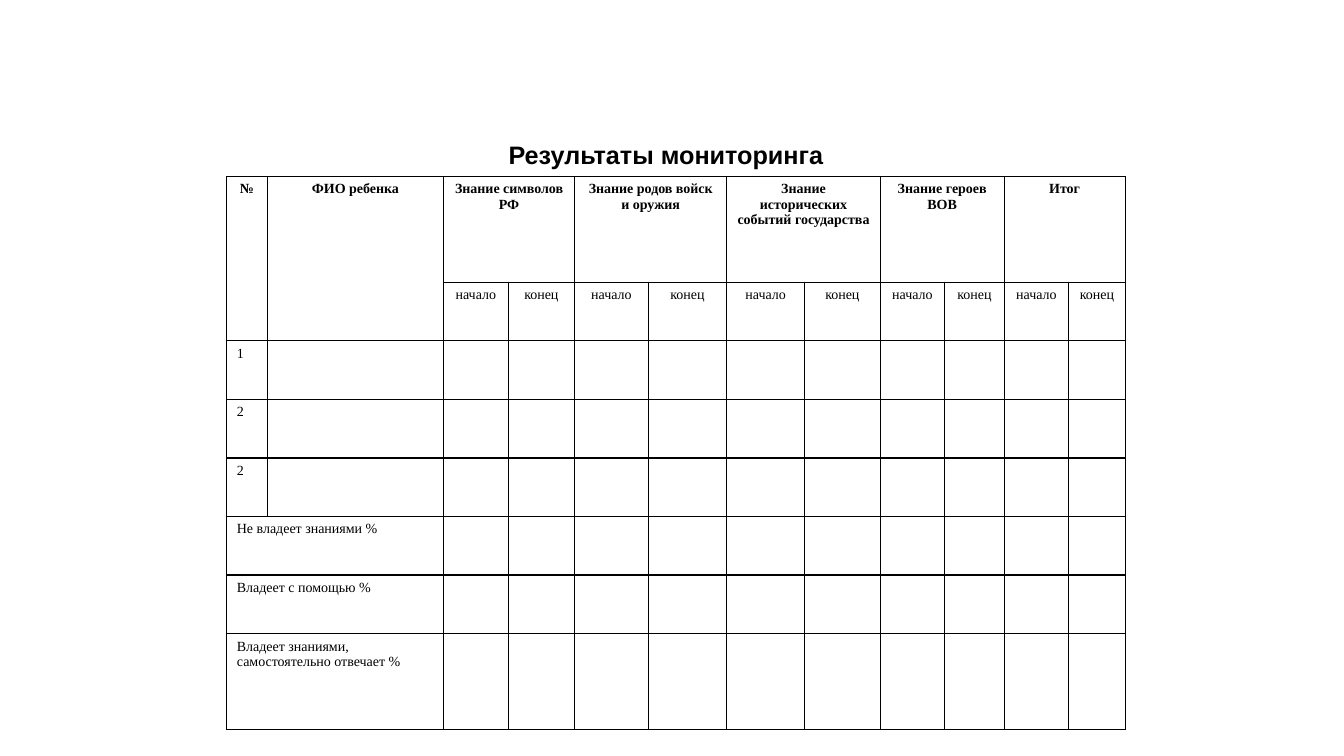
from lxml.etree import SubElement
from pptx import Presentation
from pptx.dml.color import RGBColor
from pptx.enum.text import MSO_ANCHOR as Anchor, MSO_AUTO_SIZE as AutoSize, PP_ALIGN as Align
from pptx.oxml.ns import qn
from pptx.util import Inches, Pt

COLORS = {"ink": "000000", "paper": "FFFFFF"}


def write(tf, text, font="Times New Roman", size=10, bold=False, align=Align.LEFT):
    p = tf.paragraphs[0]
    p.alignment = align
    r = p.add_run()
    r.text = text
    r.font.name, r.font.size, r.font.bold = font, Pt(size), bold
    r.font.color.rgb = RGBColor.from_string(COLORS["ink"])


class Deck:
    """Holds the style and the current slide; lengths are percent of its size."""

    def __init__(self):
        self.prs = Presentation()
        self.prs.slide_width, self.prs.slide_height = Inches(13.33), Inches(7.5)
        self.s = self.prs.slides.add_slide(self.prs.slide_layouts[6])

    def x(self, share):
        return round(self.prs.slide_width * share / 100)

    def y(self, share):
        return round(self.prs.slide_height * share / 100)

    def title(self, text, left, top, width, height):
        sp = self.s.shapes.add_textbox(self.x(left), self.y(top), self.x(width), self.y(height))
        sp.fill.solid()
        sp.fill.fore_color.rgb = RGBColor.from_string(COLORS["paper"])
        tf = sp.text_frame
        tf.word_wrap = False
        tf.auto_size = AutoSize.SHAPE_TO_FIT_TEXT
        tf.vertical_anchor = Anchor.MIDDLE
        write(tf, text, font="Arial", size=18, bold=True, align=Align.CENTER)

    def table(self, left, top, widths, heights):
        frame = self.s.shapes.add_table(len(heights), len(widths), self.x(left), self.y(top),
                                        self.x(sum(widths)), self.y(sum(heights)))
        table = frame.table
        table.first_row = table.horz_banding = False
        for column, width in zip(table.columns, widths):
            column.width = self.x(width)
        for row, height in zip(table.rows, heights):
            row.height = self.y(height)
        for cell in table.iter_cells():
            self.borders(cell)
            cell.fill.background()
        return table

    def borders(self, cell):
        tcPr = cell._tc.get_or_add_tcPr()
        for side in ("lnL", "lnR", "lnT", "lnB"):
            ln = SubElement(tcPr, qn(f"a:{side}"), w=str(Pt(1)))
            SubElement(SubElement(ln, qn("a:solidFill")), qn("a:srgbClr"), val=COLORS["ink"])


def main():
    deck = Deck()

    # Monitoring table
    widths = [3, 13.13, 4.8, 4.95, 5.48, 5.85, 5.78, 5.63, 4.8, 4.43, 4.8, 4.2]
    heights = [14] + [7.75] * 6 + [12.67]
    table = deck.table(16.88, 23.33, widths, heights)

    # Two-row headings for number and name
    for col, text in enumerate(["№", "ФИО ребенка"]):
        table.cell(0, col).merge(table.cell(1, col))
        write(table.cell(0, col).text_frame, text, bold=True, align=Align.CENTER)

    # Topics, each split into start and end
    topics = ["Знание символов РФ", "Знание родов войск и оружия",
              "Знание исторических событий государства", "Знание героев ВОВ", "Итог"]
    for i, topic in enumerate(topics):
        col = 2 + 2 * i
        table.cell(0, col).merge(table.cell(0, col + 1))
        write(table.cell(0, col).text_frame, topic, bold=True, align=Align.CENTER)
        for step, text in enumerate(["начало", "конец"]):
            write(table.cell(1, col + step).text_frame, text, align=Align.CENTER)

    # Children's rows, then the summary rows across two columns
    for row, text in enumerate(["1", "2", "2"], start=2):
        write(table.cell(row, 0).text_frame, text)
    summary = ["Не владеет знаниями %", "Владеет с помощью %",
               "Владеет знаниями, самостоятельно отвечает %"]
    for row, text in enumerate(summary, start=5):
        table.cell(row, 0).merge(table.cell(row, 1))
        write(table.cell(row, 0).text_frame, text)

    # Heading
    deck.title("Результаты мониторинга", 36.91, 17.73, 25.28, 5.33)

    deck.prs.save("out.pptx")


if __name__ == "__main__":
    main()
